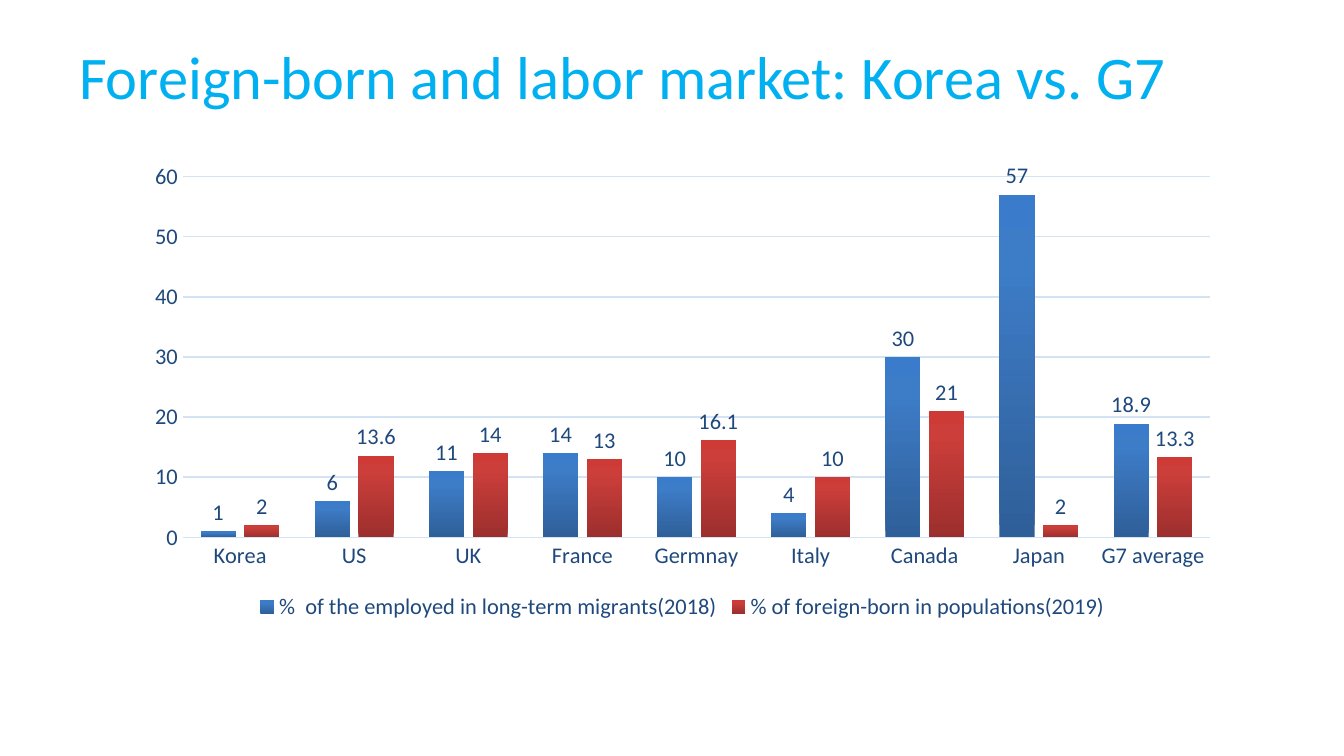
from copy import deepcopy

from pptx import Presentation
from pptx.chart.data import CategoryChartData
from pptx.dml.color import RGBColor
from pptx.enum.chart import XL_CHART_TYPE as CT, XL_LABEL_POSITION as LP
from pptx.enum.chart import XL_LEGEND_POSITION as LEG, XL_TICK_MARK as TM
from pptx.enum.text import MSO_ANCHOR
from pptx.oxml.ns import qn
from pptx.util import Pt

PX = 9525
FONT = "Calibri"
SKY = RGBColor(0x00, 0xB0, 0xF0)
NAVY = RGBColor(0x1F, 0x49, 0x7D)
PALE = RGBColor(0xD4, 0xE3, 0xF4)
BLUES = [RGBColor(0x2F, 0x5F, 0x99), RGBColor(0x3D, 0x7C, 0xC7), RGBColor(0x3A, 0x7C, 0xCB)]
REDS = [RGBColor(0x9C, 0x2F, 0x2D), RGBColor(0xCB, 0x3E, 0x3A), RGBColor(0xCE, 0x3B, 0x37)]
STOPS = [0, 0.8, 1]
TITLE_FORMAT = {"name": FONT, "size": Pt(32.4)}
CHART_FORMAT = {"name": FONT, "size": Pt(12)}

COUNTRIES = ["Korea", "US", "UK", "France", "Germnay", "Italy", "Canada", "Japan", "G7 average"]
SERIES = [
    ("%  of the employed in long-term migrants(2018)",
     [1, 6, 11, 14, 10, 4, 30, 57, 18.9], BLUES),
    ("% of foreign-born in populations(2019)",
     [2, 13.6, 14, 13, 16.1, 10, 21, 2, 13.3], REDS),
]


def set_font(font, values, color):
    """Apply format values and a colour to a font."""
    for name, value in values.items():
        setattr(font, name, value)
    font.color.rgb = color


def set_line(line):
    """Give a line the pale hairline style."""
    line.color.rgb = PALE
    line.width = Pt(0.75)


def set_gradient(ser, colors):
    """Fill a series with a three-stop gradient that rises from dark."""
    fill = ser.format.fill
    fill.gradient()
    fill.gradient_angle = 90
    stops = next(ser._element.iter(qn("a:gsLst")))
    stops.append(deepcopy(stops[-1]))
    for stop, position, color in zip(fill.gradient_stops, STOPS, colors):
        stop.position = position
        stop.color.rgb = color


def add_title(s, x, y, w, h):
    """Place the slide title in its box."""
    tf = s.shapes.add_textbox(x * PX, y * PX, w * PX, h * PX).text_frame
    tf.word_wrap = True
    tf.vertical_anchor = MSO_ANCHOR.MIDDLE
    r = tf.paragraphs[0].add_run()
    r.text = "Foreign-born and labor market: Korea vs. G7"
    set_font(r.font, TITLE_FORMAT, SKY)


def add_migration_chart(s, x, y, w, h):
    """Place the clustered column chart in its box."""
    data = CategoryChartData()
    data.categories = COUNTRIES
    for name, values, _ in SERIES:
        data.add_series(name, values)
    chart = s.shapes.add_chart(CT.COLUMN_CLUSTERED, x * PX, y * PX, w * PX, h * PX, data).chart
    set_font(chart.font, CHART_FORMAT, NAVY)
    chart.has_title = False
    chart.has_legend = True
    chart.legend.position = LEG.BOTTOM
    chart.legend.include_in_layout = False
    set_font(chart.legend.font, CHART_FORMAT, NAVY)

    for axis in (chart.category_axis, chart.value_axis):
        axis.major_tick_mark = axis.minor_tick_mark = TM.NONE
        set_font(axis.tick_labels.font, CHART_FORMAT, NAVY)
    set_line(chart.category_axis.format.line)
    axis = chart.value_axis
    axis.format.line.fill.background()
    axis.minimum_scale, axis.maximum_scale, axis.major_unit = 0, 60, 10
    set_line(axis.major_gridlines.format.line)

    plot = chart.plots[0]
    plot.gap_width, plot.overlap = 100, -24
    plot.vary_by_categories = False
    for ser, (_, _, colors) in zip(plot.series, SERIES):
        set_gradient(ser, colors)
        labels = ser.data_labels
        labels.show_value = True
        labels.position = LP.OUTSIDE_END
        set_font(labels.font, CHART_FORMAT, NAVY)


def main():
    """Build and save the slide."""
    prs = Presentation()
    prs.slide_width, prs.slide_height = 960 * PX, 540 * PX
    s = prs.slides.add_slide(prs.slide_layouts[6])
    add_title(s, 47, 13, 866, 81)
    add_migration_chart(s, 95, 110, 785, 337)
    prs.save("out.pptx")


if __name__ == "__main__":
    main()
